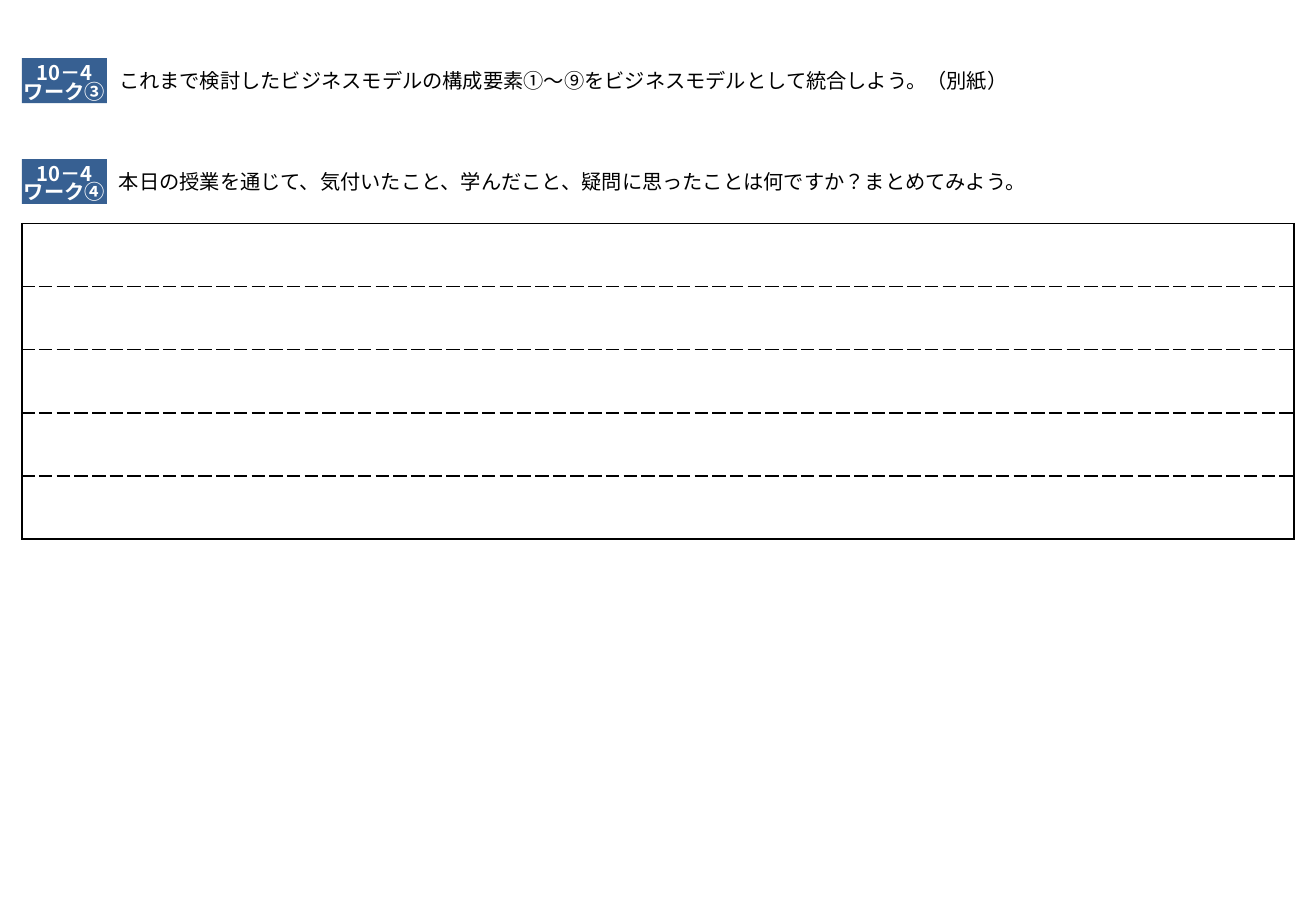
import pptx
import pptx.util
import pptx.dml.color
import pptx.enum.lang
import pptx.enum.shapes
import pptx.enum.text
import pptx.oxml
import pptx.oxml.ns

Inches = pptx.util.Inches
Pt = pptx.util.Pt
FONT = "Noto Sans CJK JP"
NAMESPACE = pptx.oxml.ns.nsdecls("a")


def color(value):
    return pptx.dml.color.RGBColor.from_string(value)


def write(paragraph, text, text_color, bold, line_spacing, alignment):
    paragraph.line_spacing = line_spacing
    paragraph.alignment = alignment
    run = paragraph.add_run()
    run.text = text
    font_format = {
        "name": FONT,
        "size": Pt(12),
        "bold": bold,
        "language_id": pptx.enum.lang.MSO_LANGUAGE_ID.JAPANESE,
    }
    for name, value in font_format.items():
        setattr(run.font, name, value)
    run.font.color.rgb = color(text_color)
    east_asian = pptx.oxml.parse_xml(f'<a:ea {NAMESPACE} typeface="{FONT}"/>')
    run.font._element.find(pptx.oxml.ns.qn("a:latin")).addnext(east_asian)


presentation = pptx.Presentation()
presentation.slide_width = Inches(10.83)
presentation.slide_height = Inches(7.5)
slide = presentation.slides.add_slide(presentation.slide_layouts[5])

question_format = {
    "word_wrap": True,
    "auto_size": pptx.enum.text.MSO_AUTO_SIZE.NONE,
    "vertical_anchor": pptx.enum.text.MSO_ANCHOR.MIDDLE,
}
badge_format = {
    "word_wrap": False,
    "vertical_anchor": pptx.enum.text.MSO_ANCHOR.BOTTOM,
    "margin_left": 0,
    "margin_top": 0,
    "margin_right": 0,
    "margin_bottom": 0,
}
works = [
    (0.48, "ワーク③", "これまで検討したビジネスモデルの構成要素①〜⑨をビジネスモデルとして統合しよう。（別紙）"),
    (1.31, "ワーク④", "本日の授業を通じて、気付いたこと、学んだこと、疑問に思ったことは何ですか？まとめてみよう。"),
]
for index, (top, work_name, question_text) in enumerate(works):
    place = {
        "left": Inches(0.88),
        "top": Inches(top + 0.08),
        "width": Inches(8.55),
        "height": Inches(0.23),
    }
    question = slide.shapes.title if index == 0 else slide.shapes.add_textbox(**place)
    for name, value in place.items():
        setattr(question, name, value)
    for name, value in question_format.items():
        setattr(question.text_frame, name, value)
    write(question.text_frame.paragraphs[0], question_text, "000000", False, 0.9,
          pptx.enum.text.PP_ALIGN.LEFT)

    badge = slide.shapes.add_shape(
        pptx.enum.shapes.MSO_SHAPE.RECTANGLE,
        Inches(0.18), Inches(top), Inches(0.7), Inches(0.37))
    badge.shadow.inherit = False
    badge.fill.solid()
    badge.fill.fore_color.rgb = color("376092")
    badge.line.fill.background()
    for name, value in badge_format.items():
        setattr(badge.text_frame, name, value)
    badge.text_frame.add_paragraph()
    for paragraph, text in zip(badge.text_frame.paragraphs, ("10－4", work_name)):
        write(paragraph, text, "FFFFFF", True, Pt(11), pptx.enum.text.PP_ALIGN.CENTER)

row_count = 5
answer = slide.shapes.add_table(
    row_count, 1, Inches(0.18), Inches(1.84), Inches(10.47), Inches(0.52 * row_count)).table
answer.first_row = False
answer.horz_banding = False
for row in range(row_count):
    cell = answer.cell(row, 0)
    dashes = {
        "lnL": "solid",
        "lnR": "solid",
        "lnT": "solid" if row == 0 else "sysDash",
        "lnB": "solid" if row == row_count - 1 else "sysDash",
    }
    properties = cell._tc.get_or_add_tcPr()
    for side, dash in dashes.items():
        properties.append(pptx.oxml.parse_xml(
            f'<a:{side} {NAMESPACE} w="{Pt(1)}"><a:solidFill><a:srgbClr val="000000"/>'
            f'</a:solidFill><a:prstDash val="{dash}"/></a:{side}>'))
    cell.fill.background()

presentation.save("out.pptx")
